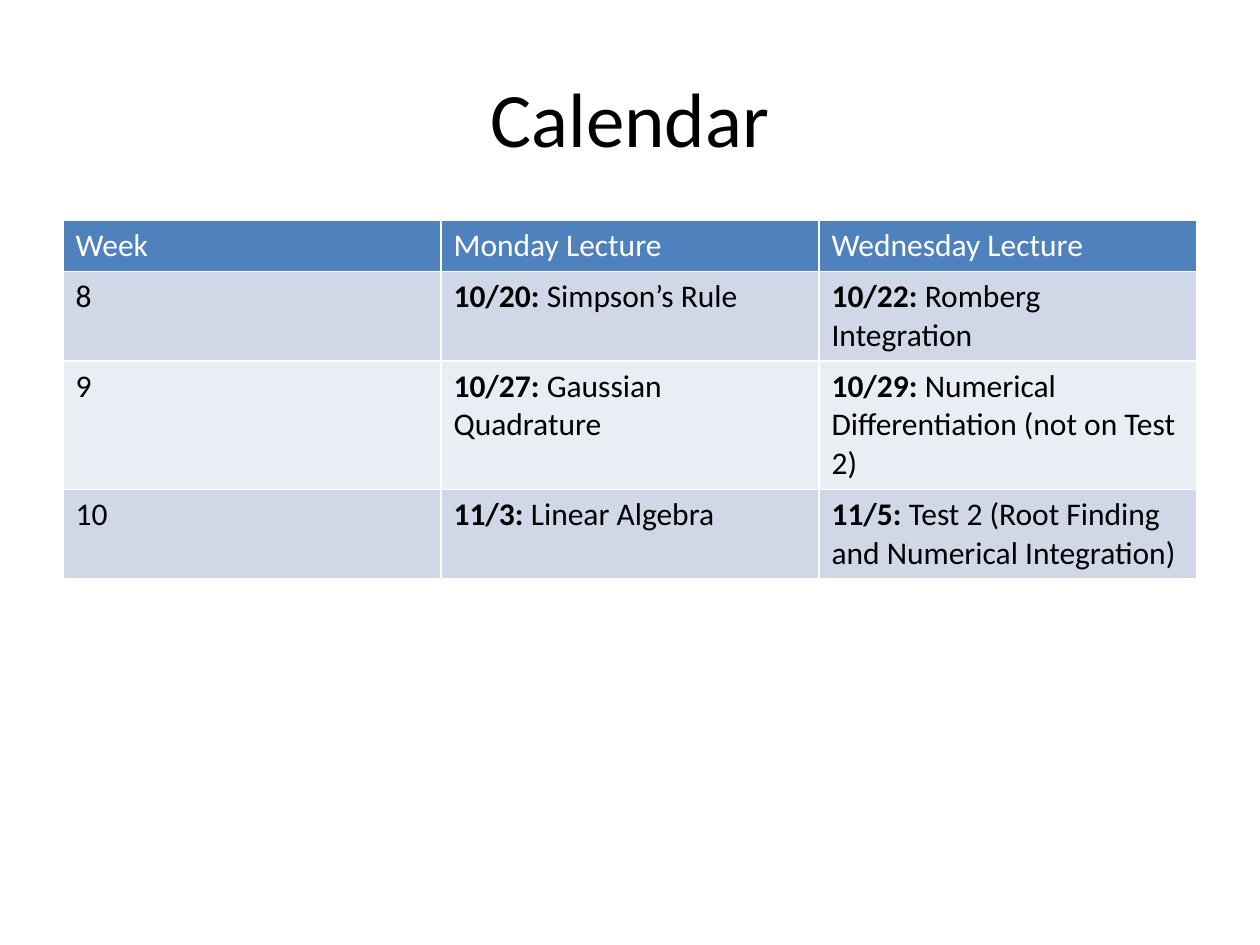
"""Build a course calendar slide with a title and a lecture table."""
from dataclasses import dataclass

from pptx import Presentation
from pptx.dml.color import RGBColor
from pptx.enum import text
from pptx.util import Inches, Pt

FONT = "Calibri"
BLACK = RGBColor(0x00, 0x00, 0x00)
WHITE = RGBColor(0xFF, 0xFF, 0xFF)
HEADER_BLUE = RGBColor(0x4F, 0x81, 0xBD)
BANDS = (RGBColor(0xD0, 0xD8, 0xE8), RGBColor(0xE9, 0xED, 0xF4))


@dataclass(frozen=True)
class Entry:
    label: str
    date: str = ""


@dataclass(frozen=True)
class Week:
    entries: tuple[Entry, Entry, Entry]
    height: float


HEADER = Week((Entry("Week"), Entry("Monday Lecture"), Entry("Wednesday Lecture")), 0.4)
WEEKS = (
    Week((Entry("8"), Entry(" Simpson’s Rule", "10/20:"),
          Entry(" Romberg Integration", "10/22:")), 0.71),
    Week((Entry("9"), Entry(" Gaussian Quadrature", "10/27:"),
          Entry(" Numerical Differentiation (not on Test 2)", "10/29:")), 1.02),
    Week((Entry("10"), Entry(" Linear Algebra", "11/3:"),
          Entry(" Test 2 (Root Finding and Numerical Integration)", "11/5:")), 0.71),
)


def format_run(run, size: float, color: RGBColor, bold: bool = False) -> None:
    run.font.name = FONT
    run.font.size = Pt(size)
    run.font.bold = bold
    run.font.color.rgb = color


def add_title(slide, wording: str) -> None:
    title = slide.shapes.title
    title.left, title.top = Inches(0.5), Inches(0.3)
    title.width, title.height = Inches(9), Inches(1.25)
    title.text_frame.text = wording
    title.text_frame.vertical_anchor = text.MSO_ANCHOR.MIDDLE
    heading = title.text_frame.paragraphs[0]
    heading.alignment = text.PP_ALIGN.CENTER
    format_run(heading.runs[0], 44, BLACK)


def fill_cell(cell, entry: Entry, fill: RGBColor, color: RGBColor) -> None:
    cell.fill.solid()
    cell.fill.fore_color.rgb = fill
    paragraph = cell.text_frame.paragraphs[0]
    if entry.date:
        date = paragraph.add_run()
        date.text = entry.date
        format_run(date, 18, color, bold=True)
    label = paragraph.add_run()
    label.text = entry.label
    format_run(label, 18, color)


def add_calendar(slide, weeks: tuple[Week, ...]) -> None:
    height = sum(week.height for week in weeks)
    calendar = slide.shapes.add_table(
        len(weeks), len(HEADER.entries),
        Inches(0.5), Inches(1.75), Inches(9), Inches(height)).table
    for index, week in enumerate(weeks):
        calendar.rows[index].height = Inches(week.height)
        fill = BANDS[(index - 1) % 2] if index else HEADER_BLUE
        color = BLACK if index else WHITE
        for column, entry in enumerate(week.entries):
            fill_cell(calendar.cell(index, column), entry, fill, color)


def main() -> None:
    deck = Presentation()
    deck.slide_width, deck.slide_height = Inches(10), Inches(7.5)
    slide = deck.slides.add_slide(deck.slide_layouts[5])
    add_title(slide, "Calendar")
    add_calendar(slide, (HEADER, *WEEKS))
    deck.save("out.pptx")


if __name__ == "__main__":
    main()
